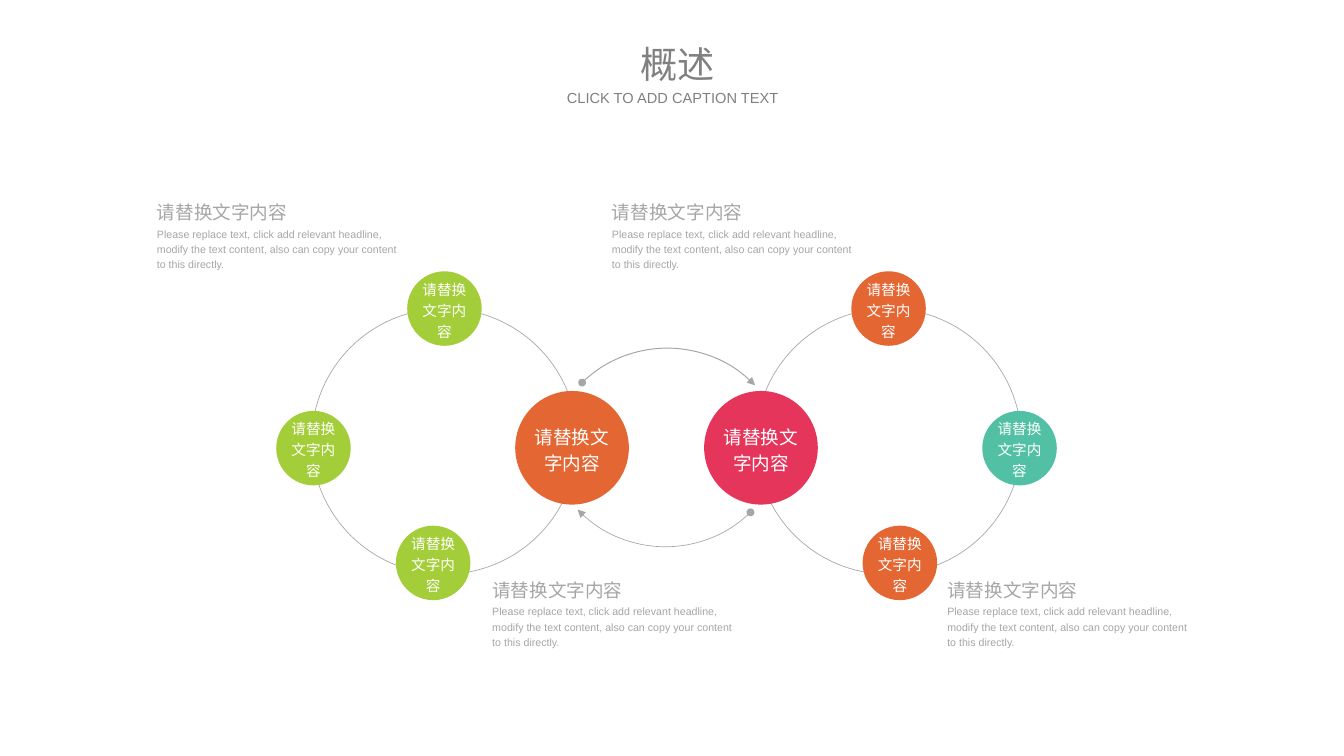
from lxml.etree import SubElement
from pptx import Presentation
from pptx.dml.color import RGBColor
from pptx.enum.shapes import MSO_SHAPE as SHAPE
from pptx.enum.text import MSO_ANCHOR as ANCHOR, MSO_AUTO_SIZE as AUTO, PP_ALIGN as ALIGN
from pptx.oxml.ns import qn
from pptx.util import Cm, Pt

WHITE = RGBColor(0xFF, 0xFF, 0xFF)
GRAY = RGBColor(0xA6, 0xA6, 0xA6)
DARK = RGBColor(0x80, 0x80, 0x80)
ORANGE = RGBColor(0xE4, 0x66, 0x33)
GREEN = RGBColor(0xA3, 0xCD, 0x39)
RED = RGBColor(0xE5, 0x35, 0x5B)
TEAL = RGBColor(0x52, 0xC0, 0xA5)

LABEL = "请替换文字内容"
BODY = ("Please replace text, click add relevant headline, modify the text content, "
        "also can copy your content to this directly.")


class Deck:
    font = "Arial"

    def __init__(self, width, height):
        self.prs = Presentation()
        self.prs.slide_width, self.prs.slide_height = Cm(width), Cm(height)
        self.s = self.prs.slides.add_slide(self.prs.slide_layouts[6])

    def fill_text(self, sp, text, size, color, frame, para):
        tf = sp.text_frame
        margins = dict.fromkeys(("margin_left", "margin_top", "margin_right", "margin_bottom"), 0)
        p = tf.paragraphs[0]
        r = p.add_run()
        r.text = text
        font = {"name": self.font, "size": Pt(size)}
        for obj, values in ((tf, margins | frame), (p, para), (r.font, font)):
            for name, value in values.items():
                setattr(obj, name, value)
        r.font.color.rgb = color

    def text(self, x, y, w, h, text, size, color=GRAY, wrap=True, anchor=ANCHOR.TOP, **para):
        sp = self.s.shapes.add_textbox(Cm(x), Cm(y), Cm(w), Cm(h))
        frame = {"word_wrap": wrap, "auto_size": AUTO.SHAPE_TO_FIT_TEXT, "vertical_anchor": anchor}
        self.fill_text(sp, text, size, color, frame, para)

    def round_shape(self, kind, cx, cy, d):
        sp = self.s.shapes.add_shape(kind, Cm(cx - d / 2), Cm(cy - d / 2), Cm(d), Cm(d))
        sp.shadow.inherit = False
        return sp

    def outline(self, sp, width):
        sp.fill.background()
        sp.line.color.rgb = GRAY
        sp.line.width = Pt(width)

    def ring(self, cx, cy, d):
        self.outline(self.round_shape(SHAPE.OVAL, cx, cy, d), 0.5)

    def disc(self, cx, cy, d, color, size):
        sp = self.round_shape(SHAPE.OVAL, cx, cy, d)
        sp.fill.solid()
        sp.fill.fore_color.rgb = color
        sp.line.fill.background()
        frame = {"word_wrap": True, "vertical_anchor": ANCHOR.MIDDLE}
        self.fill_text(sp, LABEL, size, WHITE, frame,
                       {"alignment": ALIGN.CENTER, "line_spacing": 1.2})

    def arc(self, cx, cy, d, start, end, width):
        sp = self.round_shape(SHAPE.ARC, cx, cy, d)
        # Arc angles are stored in 60000ths of a degree, adjustments in 100000ths
        sp.adjustments[0], sp.adjustments[1] = start * 0.6, end * 0.6
        sp.rotation = 315.9
        self.outline(sp, width)
        ln = sp.element.spPr.find(qn("a:ln"))
        for tag, kind in (("a:headEnd", "oval"), ("a:tailEnd", "triangle")):
            SubElement(ln, qn(tag), type=kind)

    def note(self, x, y):
        self.text(x, y + 0.75, 6.55, 1.22, BODY, 8, line_spacing=1.2)
        self.text(x, y, 3.48, 0.71, LABEL, 14, wrap=False, line_spacing=1.2)


def main():
    deck = Deck(35.71, 20.09)

    # Two mirrored wheels: ring, hub and three satellites
    mirror = 35.42
    satellites = ((8.33, 11.91), (11.81, 8.2), (11.51, 14.96))
    wheels = (
        (lambda x: x, ORANGE, (GREEN, GREEN, GREEN)),
        (lambda x: mirror - x, RED, (TEAL, ORANGE, ORANGE)),
    )
    for place, hub, colors in wheels:
        deck.ring(place(11.81), 11.73, 7.06)
        deck.disc(place(15.2), 11.9, 3.02, hub, 14)
        for (x, y), color in zip(satellites, colors):
            deck.disc(place(x), y, 1.98, color, 11)

    # Arrows between the hubs
    deck.arc(17.73, 12.5, 6.5, 270, 0, 0.75)
    deck.arc(17.68, 11.28, 6.5, 90, 180, 0.5)

    # Notes: two per row, the lower row shifted right
    for left, top in ((13.08, 15.27), (4.17, 5.23)):
        for col in range(2):
            deck.note(left + col * 12.09, top)

    # Title and caption
    heading = {"color": DARK, "anchor": ANCHOR.MIDDLE, "alignment": ALIGN.CENTER}
    deck.text(14.8, 1.07, 6.43, 1.24, "概述", 28, **heading)
    deck.text(14.66, 2.36, 6.43, 0.48, "CLICK TO ADD CAPTION TEXT", 11, **heading)

    deck.prs.save("out.pptx")


if __name__ == "__main__":
    main()
